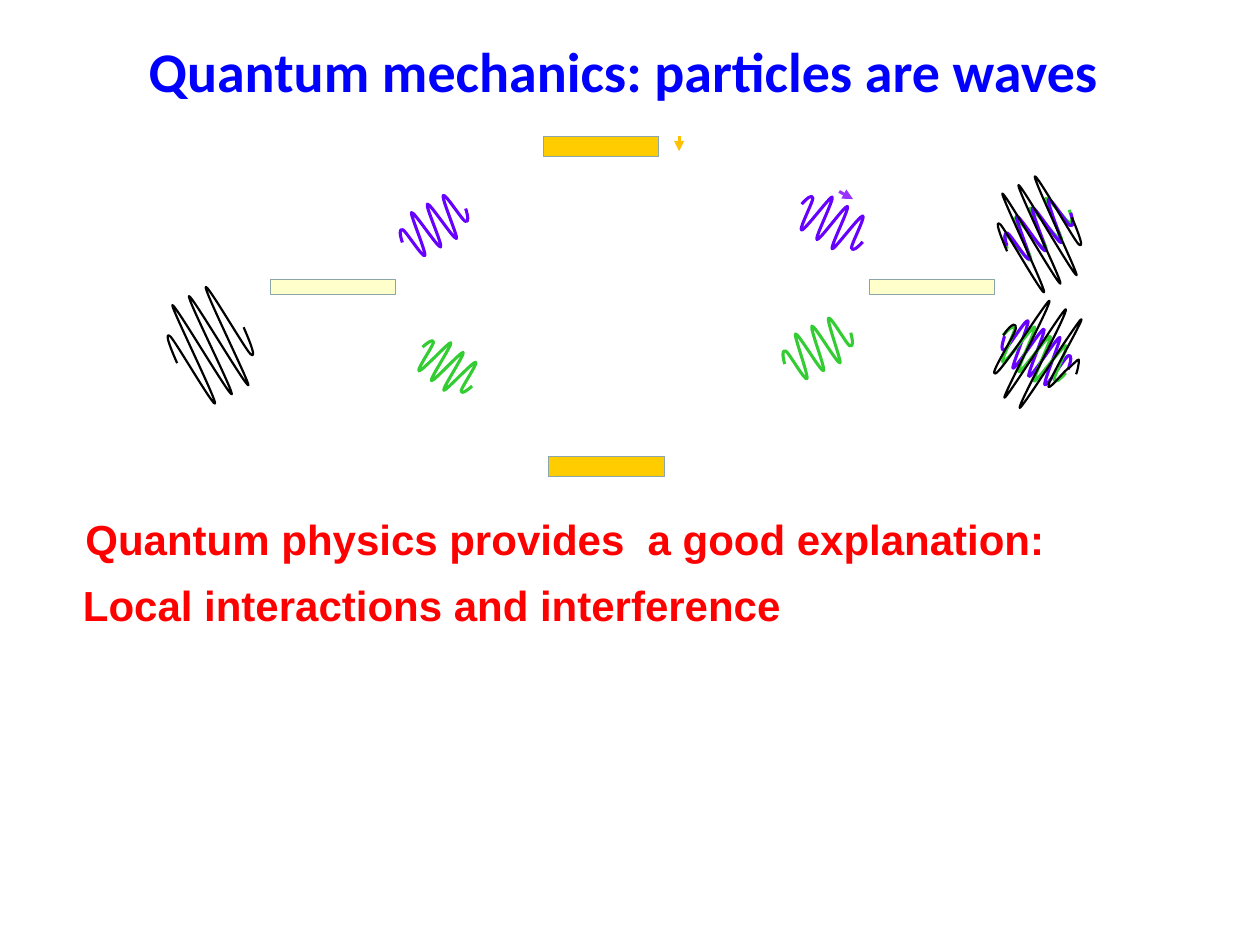
"""Build the slide on quantum particles as waves in an interferometer."""
import pptx
import pptx.dml.color
import pptx.enum.shapes
import pptx.enum.text
import pptx.oxml
import pptx.oxml.ns
import pptx.util
from pptx.util import Inches

RGBColor = pptx.dml.color.RGBColor
BLACK = RGBColor(0x00, 0x00, 0x00)
BLUE = RGBColor(0x00, 0x00, 0xFF)
RED = RGBColor(0xFF, 0x00, 0x00)
PURPLE = RGBColor(0x66, 0x00, 0xFF)
VIOLET = RGBColor(0x99, 0x33, 0xFF)
GREEN = RGBColor(0x33, 0xCC, 0x33)
AMBER = RGBColor(0xFF, 0xC0, 0x00)
MIRROR = RGBColor(0xFF, 0xCC, 0x00)
SPLITTER = RGBColor(0xFF, 0xFF, 0xCC)
EDGE = RGBColor(0x8A, 0xA6, 0xA8)

HALF_WAVE = [
    (0, .5), (.02, .34), (.05, .2), (.09, .27), (.12, .34), (.15, 1), (.19, .96),
    (.23, .92), (.28, .04), (.31, .04), (.35, .04), (.4, .96), (.44, .96), (.48, .96),
]
WAVE = HALF_WAVE + [(1 - u, 1 - v) for u, v in reversed(HALF_WAVE)]
FLIPPED_WAVE = [(u, 1 - v) for u, v in WAVE]
MERGED_WAVE = [
    (.01, .5), (.02, .34), (.08, .34), (.1, .39), (.13, .45), (.1, .9), (.16, .84),
    (.22, .77), (.25, -.02), (.28, .01), (.32, .03), (.37, .99), (.4, .99),
    (.43, .99), (.47, 0), (.5, 0), (.55, .01), (.58, .99), (.62, 1),
    (.65, 1), (.69, .06), (.72, .01), (.75, -.04), (.75, .62), (.78, .68),
    (.81, .77), (.85, .52), (.88, .47), (.9, .44), (.93, .33), (.94, .34),
    (.95, .34), (1, .44), (1, .47),
]


def add_text(sp, text, *, font, size, color, anchor, wrap=True):
    """Write one bold line of text into a shape."""
    tf = sp.text_frame
    tf.word_wrap = wrap
    tf.vertical_anchor = anchor
    p = tf.paragraphs[0]
    p.alignment = pptx.enum.text.PP_ALIGN.LEFT
    r = p.add_run()
    r.text = text
    r.font.name = font
    r.font.size = pptx.util.Pt(size)
    r.font.bold = True
    r.font.color.rgb = color
    return tf


def add_wave(s, points, x, y, w, h, rotation, color, width):
    """Draw a rotated curve whose points are fractions of its frame."""
    pts = [(Inches(x + u * w), Inches(y + v * h)) for u, v in points]
    builder = s.shapes.build_freeform(*pts[0], scale=1.0)
    builder.add_line_segments(pts[1:], close=False)
    sp = builder.convert_to_shape()
    qn = pptx.oxml.ns.qn
    path = next(sp._element.iter(qn("a:path")))
    lines = path.findall(qn("a:lnTo"))
    for i in range(0, len(lines), 3):
        curve = pptx.oxml.parse_xml(f"<a:cubicBezTo {pptx.oxml.ns.nsdecls('a')}/>")
        for line in lines[i:i + 3]:
            curve.append(line[0])
            path.remove(line)
        path.append(curve)
    sp.rotation = rotation
    sp.fill.background()
    sp.line.color.rgb = color
    sp.line.width = pptx.util.Pt(width)
    sp.shadow.inherit = False


prs = pptx.Presentation()
prs.slide_width, prs.slide_height = Inches(10), Inches(7.5)
s = prs.slides.add_slide(prs.slide_layouts[5])

title = s.shapes.title
title.left, title.top, title.width, title.height = map(Inches, (1.08, 0.24, 7.8, 0.64))
tf = add_text(title, "Quantum mechanics: particles are waves", font="Calibri", size=32,
              color=BLUE, anchor=pptx.enum.text.MSO_ANCHOR.TOP, wrap=False)
tf.auto_size = pptx.enum.text.MSO_AUTO_SIZE.SHAPE_TO_FIT_TEXT

for x, y, w, h, color in [
    (2.15, 2.22, 0.99, 0.12, SPLITTER),
    (4.31, 1.08, 0.92, 0.16, MIRROR),
    (4.35, 3.62, 0.92, 0.16, MIRROR),
    (6.9, 2.22, 0.99, 0.12, SPLITTER),
]:
    sp = s.shapes.add_shape(pptx.enum.shapes.MSO_SHAPE.RECTANGLE,
                            Inches(x), Inches(y), Inches(w), Inches(h))
    sp.fill.solid()
    sp.fill.fore_color.rgb = color
    sp.line.color.rgb = EDGE
    sp.line.width = pptx.util.Pt(0.5)
    sp.shadow.inherit = False

for points, x, y, w, h, rotation, color, width in [
    (WAVE, 3.16, 1.6, 0.57, 0.38, 331.8, PURPLE, 1.75),
    (WAVE, 3.3, 2.73, 0.5, 0.36, 38.2, GREEN, 1.75),
    (WAVE, 1.37, 2.28, 0.6, 0.92, 331.6, BLACK, 1.25),
    (WAVE, 7.95, 1.63, 0.58, 0.38, 327.9, GREEN, 1.75),
    (WAVE, 6.2, 2.57, 0.58, 0.39, 334.6, GREEN, 1.75),
    (WAVE, 7.96, 1.63, 0.57, 0.38, 332.6, PURPLE, 1.75),
    (WAVE, 6.32, 1.58, 0.57, 0.38, 31.7, PURPLE, 1.75),
    (FLIPPED_WAVE, 7.94, 2.59, 0.57, 0.42, 207.6, PURPLE, 1.75),
    (WAVE, 7.92, 2.61, 0.58, 0.4, 31, GREEN, 1.75),
    (WAVE, 7.96, 1.4, 0.58, 0.92, 332.3, BLACK, 1.25),
    (MERGED_WAVE, 7.92, 2.4, 0.66, 0.86, 30.3, BLACK, 1.25),
]:
    add_wave(s, points, x, y, w, h, rotation, color, width)

for x1, y1, x2, y2, color in [
    (6.66, 1.52, 6.77, 1.58, VIOLET),
    (5.39, 1.08, 5.39, 1.2, AMBER),
]:
    arrow = s.shapes.add_connector(pptx.enum.shapes.MSO_CONNECTOR.STRAIGHT,
                                   Inches(x1), Inches(y1), Inches(x2), Inches(y2))
    arrow.line.color.rgb = color
    arrow.line.width = pptx.util.Pt(1.75)
    ns = pptx.oxml.ns.nsdecls("a")
    arrow.line._get_or_add_ln().append(
        pptx.oxml.parse_xml(f'<a:tailEnd {ns} type="triangle"/>'))
    arrow._element.spPr.append(pptx.oxml.parse_xml(f"<a:effectLst {ns}/>"))

for text, x, y, h in [
    ("Quantum physics provides  a good explanation:", 0.58, 3.78, 0.99),
    ("Local interactions and interference", 0.56, 4.37, 0.86),
]:
    box = s.shapes.add_textbox(Inches(x), Inches(y), Inches(9.22), Inches(h))
    add_text(box, text, font="Arial", size=24, color=RED,
             anchor=pptx.enum.text.MSO_ANCHOR.MIDDLE)

prs.save("out.pptx")
